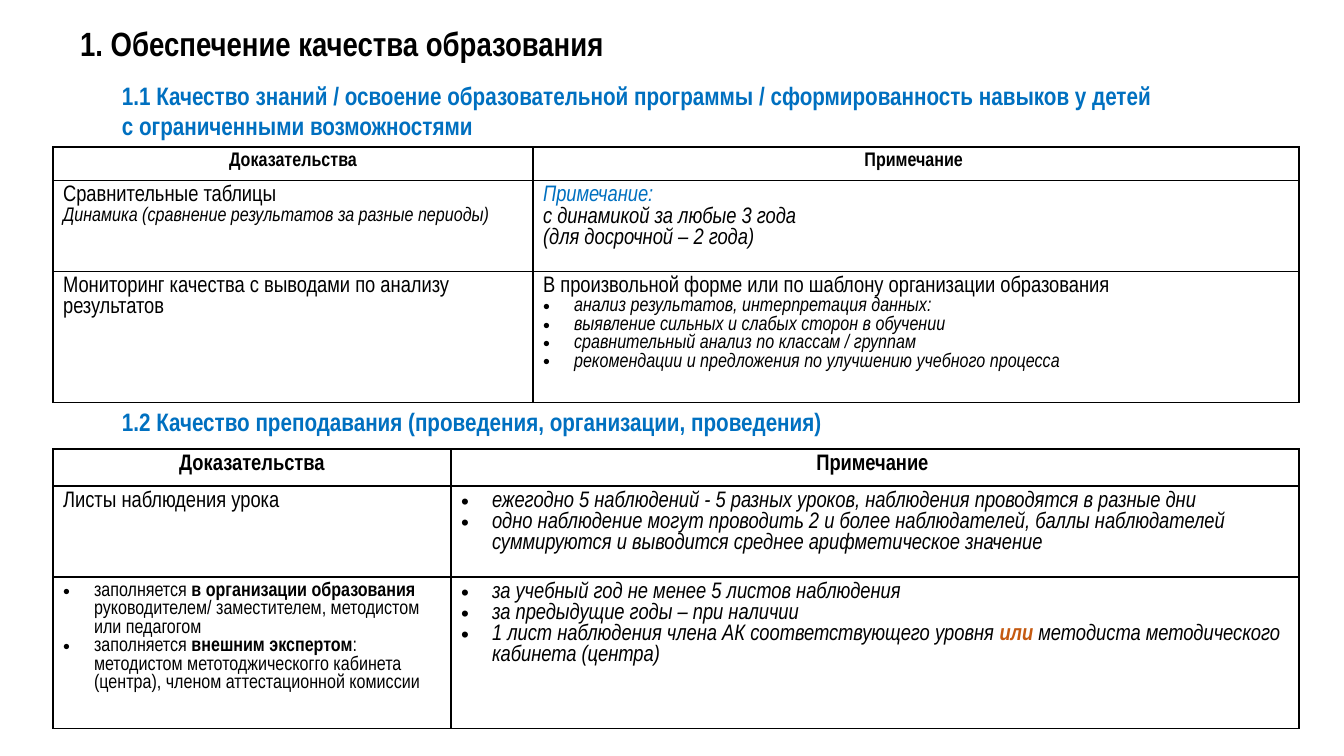
import pptx
import pptx.dml.color
import pptx.enum.text
import pptx.util
import lxml.etree

RGBColor = pptx.dml.color.RGBColor
BLACK = RGBColor(0x00, 0x00, 0x00)
BLUE = RGBColor(0x00, 0x70, 0xC0)
ORANGE = RGBColor(0xC5, 0x5A, 0x11)
NS = "http://schemas.openxmlformats.org/drawingml/2006/main"
ALIGN = pptx.enum.text.PP_ALIGN
ANCHOR = pptx.enum.text.MSO_ANCHOR
FIT = pptx.enum.text.MSO_AUTO_SIZE

# Text formats
TITLE = {"size": 24, "bold": True}
HEADING = {"size": 18, "bold": True, "color": BLUE}
BODY = {"size": 16}
SMALL = {"size": 14}
NOTE = {"size": 16, "italic": True}
SMALL_NOTE = {"size": 14, "italic": True}
BOLD = {"bold": True}


def px(n):
    return pptx.util.Emu(round(n * 914400 / 100.8))


def add_xml(parent, tag, **attrs):
    return lxml.etree.SubElement(parent, f"{{{NS}}}{tag}", attrs)


def para(fmt, *runs, bullet=False, align=ALIGN.LEFT):
    """A paragraph; each run is a text or a (text, format changes) pair."""
    return {"fmt": fmt, "runs": runs, "bullet": bullet, "align": align}


def bullets(fmt, *lines):
    return [para(fmt, *([line] if isinstance(line, str) else line), bullet=True)
            for line in lines]


def header(size):
    fmt = {"size": size, "bold": True}
    return [[para(fmt, name, align=ALIGN.CENTER)]
            for name in ("Доказательства", "Примечание ")]


class Deck:
    font = "Arial Narrow"
    indent = 31

    def __init__(self, width, height):
        self.prs = pptx.Presentation()
        self.prs.slide_width, self.prs.slide_height = px(width), px(height)
        self.s = self.prs.slides.add_slide(self.prs.slide_layouts[5])

    def fill_text(self, tf, paras, spacing=None):
        for i, item in enumerate(paras):
            p = tf.add_paragraph() if i else tf.paragraphs[0]
            p.alignment = item["align"]
            p.line_spacing = spacing
            if item["bullet"]:
                pPr = p._p.get_or_add_pPr()
                pPr.set("marL", str(px(self.indent)))
                pPr.set("indent", str(-px(self.indent)))
                add_xml(pPr, "buFont", typeface="Arial")
                add_xml(pPr, "buChar", char="•")
            for run in item["runs"]:
                text, changes = (run, {}) if isinstance(run, str) else run
                self.add_run(p, text, {**item["fmt"], **changes})

    def add_run(self, p, text, fmt):
        r = p.add_run()
        r.text = text
        style = {"name": self.font, "bold": False, "italic": False, **fmt}
        r.font.color.rgb = style.pop("color", BLACK)
        style["size"] = pptx.util.Pt(style["size"])
        for name, value in style.items():
            setattr(r.font, name, value)

    def title(self, text, x, y, w, h):
        sp = self.s.shapes.title
        for name, value in {"left": x, "top": y, "width": w, "height": h}.items():
            setattr(sp, name, px(value))
        tf = sp.text_frame
        tf.auto_size, tf.vertical_anchor = FIT.NONE, ANCHOR.MIDDLE
        self.fill_text(tf, [para(TITLE, text)], 0.9)

    def heading(self, lines, x, y, w, h):
        sp = self.s.shapes.add_textbox(*map(px, (x, y, w, h)))
        tf = sp.text_frame
        tf.word_wrap, tf.auto_size = True, FIT.SHAPE_TO_FIT_TEXT
        self.fill_text(tf, [para(HEADING, line) for line in lines])

    def table(self, x, y, widths, heights, rows):
        frame = self.s.shapes.add_table(len(heights), len(widths), px(x), px(y),
                                        px(sum(widths)), px(sum(heights)))
        table = frame.table
        table.first_row = table.horz_banding = False
        for column, width in zip(table.columns, widths):
            column.width = px(width)
        for row, height, contents in zip(table.rows, heights, rows):
            row.height = px(height)
            for cell, paras in zip(row.cells, contents):
                self.border(cell)
                cell.fill.background()
                self.fill_text(cell.text_frame, paras)

    def border(self, cell):
        tcPr = cell._tc.get_or_add_tcPr()
        for side in ("lnL", "lnR", "lnT", "lnB"):
            ln = add_xml(tcPr, side, w=str(pptx.util.Pt(1)))
            add_xml(add_xml(ln, "solidFill"), "srgbClr", val=str(BLACK))


def main():
    deck = Deck(1344, 756)
    deck.title("1. Обеспечение качества образования", 70, 16, 1159, 59)

    # Section 1.1
    deck.heading(["1.1 Качество знаний / освоение образовательной программы / "
                  "сформированность навыков у детей",
                  "с ограниченными возможностями"], 112, 75, 1230, 71)
    deck.table(53, 147, [480, 766], [33, 90, 131], [
        header(14),
        [[para(BODY, "Сравнительные таблицы"),
          para(SMALL_NOTE, "Динамика (сравнение результатов за разные периоды)")],
         [para({**NOTE, "color": BLUE}, "Примечание:"),
          para(NOTE, "с динамикой за любые 3 года"),
          para(NOTE, "(для досрочной – 2 года)")]],
        [[para(BODY, "Мониторинг качества с выводами по анализу результатов")],
         [para(BODY, "В произвольной форме или по шаблону организации образования"),
          *bullets(SMALL_NOTE,
                   "анализ результатов, интерпретация данных:",
                   "выявление сильных и слабых сторон в обучении",
                   "сравнительный анализ по классам / группам",
                   "рекомендации и предложения по улучшению учебного процесса")]],
    ])

    # Section 1.2
    deck.heading(["1.2 Качество преподавания (проведения, организации, проведения)"],
                 112, 401, 814, 40)
    deck.table(53, 449, [398, 848], [36, 91, 151], [
        header(16),
        [[para(BODY, "Листы наблюдения урока")],
         bullets(NOTE,
                 "ежегодно 5 наблюдений - 5 разных уроков, наблюдения проводятся "
                 "в разные дни",
                 "одно наблюдение могут проводить 2 и более наблюдателей, баллы "
                 "наблюдателей суммируются и выводится среднее арифметическое значение")],
        [bullets(SMALL,
                 ["заполняется ", ("в организации образования ", BOLD),
                  "руководителем/ заместителем, методистом или педагогом"],
                 ["заполняется ", ("внешним экспертом", BOLD),
                  ": методистом метотоджическогго кабинета (центра), "
                  "членом аттестационной комиссии"]),
         bullets(NOTE,
                 "за учебный год не менее 5 листов наблюдения",
                 "за предыдущие годы – при наличии",
                 ["1 лист наблюдения члена АК соответствующего уровня ",
                  ("или ", {"bold": True, "color": ORANGE}),
                  "методиста методического кабинета (центра)"])],
    ])
    deck.prs.save("out.pptx")


if __name__ == "__main__":
    main()
